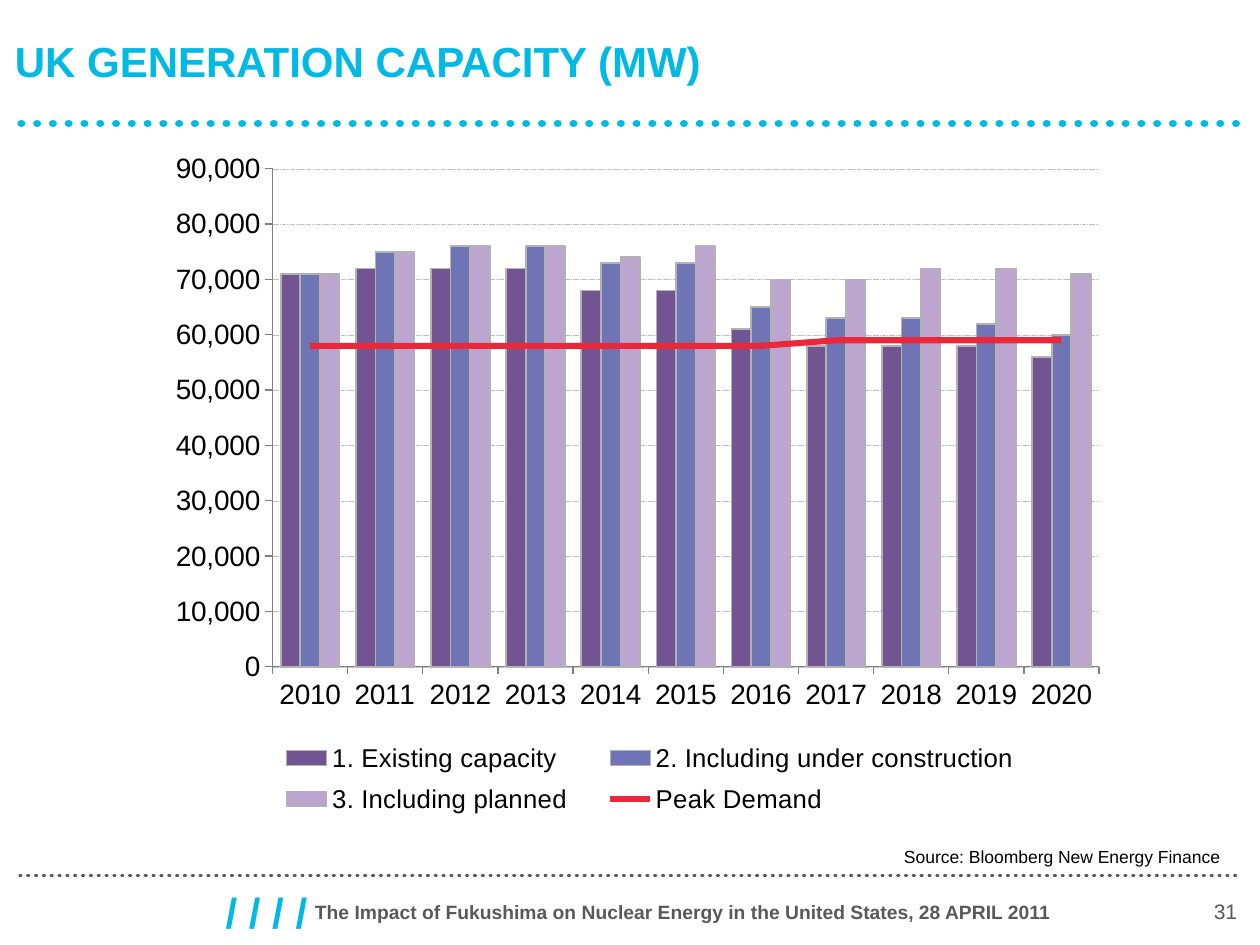
from lxml import etree
from pptx import Presentation
from pptx.chart.data import CategoryChartData
from pptx.dml.color import RGBColor
from pptx.enum.chart import XL_CHART_TYPE as ChartType, XL_LEGEND_POSITION as LegendPosition
from pptx.enum.chart import XL_MARKER_STYLE as MarkerStyle, XL_TICK_MARK as TickMark
from pptx.enum.dml import MSO_LINE as Dash
from pptx.enum.shapes import MSO_CONNECTOR as Connector
from pptx.enum.text import MSO_ANCHOR as Anchor, PP_ALIGN as Align
from pptx.oxml import parse_xml
from pptx.oxml.ns import nsdecls, qn
from pptx.util import Cm, Pt

FONT = "Arial"
CYAN, GREY, BLACK = "00B9E4", "595959", "000000"
BAR_EDGE, AXIS_GREY, GRID_GREY = "B2B2B2", "808080", "C0C0C0"

TEXTS = [
    ("The Impact of Fukushima on Nuclear Energy in the United States, 28 APRIL 2011",
     (6.35, 17.7, 16.23, 1.35), 11, GREY, True, Align.LEFT, (0, 0.1), Anchor.MIDDLE),
    ("31", (21.41, 17.7, 3.78, 1.35), 12, GREY, False, Align.RIGHT, (0.25, 0.13), Anchor.MIDDLE),
    ("/ / / /", (4.55, 17.7, 3.89, 1.35), 24, CYAN, True, Align.LEFT, (0, 0.1), Anchor.MIDDLE),
    ("UK GENERATION CAPACITY (MW)",
     (0.3, 0.42, 24.71, 1.6), 24, CYAN, True, Align.LEFT, (0, 0.13), Anchor.MIDDLE),
    ("Source: Bloomberg New Energy Finance",
     (0.99, 16.92, 23.85, 0.74), 10, BLACK, False, Align.RIGHT, (0.25, 0.13), Anchor.TOP),
]
RULES = [(0.41, 17.65, 24.97, GREY, 2.25), (0.43, 2.49, 24.99, CYAN, 4.5)]

YEARS = [str(year) for year in range(2010, 2021)]
CAPACITY = [
    ("1. Existing capacity", "725492", [71, 72, 72, 72, 68, 68, 61, 58, 58, 58, 56]),
    ("2. Including under construction", "6F75B4", [71, 75, 76, 76, 73, 73, 65, 63, 63, 62, 60]),
    ("3. Including planned", "BCA6D0", [71, 75, 76, 76, 74, 76, 70, 70, 72, 72, 71]),
]
DEMAND = ("Peak Demand", "EA2839", [58, 58, 58, 58, 58, 58, 58, 59, 59, 59, 59])
CHART_BOX = (2.41, 2.24, 20.57, 14.55)
PLOT_AREA = (0.15, 0.08, 0.81, 0.69)
LEGEND_AREA = (0.13, 0.86, 0.78, 0.13)


def color(value):
    return RGBColor.from_string(value)


def style_line(line, value, width, dash=None):
    line.color.rgb = color(value)
    line.width = Pt(width)
    if dash:
        line.dash_style = dash


def style_font(font, size, value=BLACK, bold=False):
    font.name, font.size, font.bold = FONT, Pt(size), bold
    font.color.rgb = color(value)


def add_text(slide, text, box, size, value, bold, align, insets, anchor):
    frame = slide.shapes.add_textbox(*map(Cm, box)).text_frame
    frame.word_wrap = True
    frame.vertical_anchor = anchor
    frame.margin_left, frame.margin_right = Cm(insets[0]), Cm(insets[0])
    frame.margin_top, frame.margin_bottom = Cm(insets[1]), Cm(insets[1])
    paragraph = frame.paragraphs[0]
    paragraph.alignment = align
    run = paragraph.add_run()
    run.text = text
    style_font(run.font, size, value, bold)


def add_rule(slide, left, top, right, value, width):
    rule = slide.shapes.add_connector(Connector.STRAIGHT, Cm(left), Cm(top), Cm(right), Cm(top))
    style_line(rule.line, value, width, Dash.ROUND_DOT)
    rule.get_or_add_ln().set("cap", "rnd")
    etree.SubElement(rule._element.spPr, qn("a:effectLst"))


def layout_xml(area, inner=False):
    target = '<c:layoutTarget val="inner"/>' if inner else ""
    modes = '<c:xMode val="edge"/><c:yMode val="edge"/>'
    sizes = "".join(f'<c:{name} val="{value}"/>' for name, value in zip("xywh", area))
    return parse_xml(f'<c:layout {nsdecls("c")}><c:manualLayout>{target}{modes}{sizes}'
                     '</c:manualLayout></c:layout>')


def remove_children(element, tag):
    for child in element.findall(qn(tag)):
        element.remove(child)


def move_last_series_to_line(chart):
    bars = chart._chartSpace.find(".//" + qn("c:barChart"))
    series = bars.findall(qn("c:ser"))[-1]
    remove_children(series, "c:invertIfNegative")
    lines = parse_xml(f'<c:lineChart {nsdecls("c")}><c:grouping val="standard"/>'
                      '<c:varyColors val="0"/><c:marker val="1"/></c:lineChart>')
    lines.insert(2, series)
    for axis in bars.findall(qn("c:axId")):
        etree.SubElement(lines, qn("c:axId")).set("val", axis.get("val"))
    bars.addnext(lines)


def add_capacity_chart(slide):
    data = CategoryChartData(number_format="#,##0")
    data.categories = YEARS
    for name, _, thousands in CAPACITY + [DEMAND]:
        data.add_series(name, [value * 1000 for value in thousands])
    chart = slide.shapes.add_chart(ChartType.COLUMN_CLUSTERED, *map(Cm, CHART_BOX), data).chart
    chart.has_title = False
    style_font(chart.font, 16)
    move_last_series_to_line(chart)

    bars, lines = chart.plots
    bars.gap_width, bars.overlap = 84, 0
    bars.vary_by_categories = False
    for series, (_, value, _) in zip(bars.series, CAPACITY):
        series.invert_if_negative = False
        series.format.fill.solid()
        series.format.fill.fore_color.rgb = color(value)
        style_line(series.format.line, BAR_EDGE, 1)
    demand = lines.series[0]
    demand.smooth = False
    demand.marker.style = MarkerStyle.NONE
    style_line(demand.format.line, DEMAND[1], 3.5)

    for axis in (chart.category_axis, chart.value_axis):
        axis.major_tick_mark, axis.minor_tick_mark = TickMark.OUTSIDE, TickMark.NONE
        style_font(axis.tick_labels.font, 16)
        style_line(axis.format.line, AXIS_GREY, 0.75)
    values = chart.value_axis
    values.minimum_scale, values.maximum_scale, values.major_unit = 0, 90000, 10000
    values.tick_labels.number_format = "#,##0"
    values.tick_labels.number_format_is_linked = False
    style_line(values.major_gridlines.format.line, GRID_GREY, 0.25, Dash.SQUARE_DOT)

    chart.has_legend = True
    legend = chart.legend
    legend.position = LegendPosition.BOTTOM
    legend.include_in_layout = False
    style_font(legend.font, 14.7)
    plot_area = chart._chartSpace.find(".//" + qn("c:plotArea"))
    remove_children(plot_area, "c:layout")
    plot_area.insert(0, layout_xml(PLOT_AREA, inner=True))
    remove_children(legend._element, "c:layout")
    legend._element.find(qn("c:legendPos")).addnext(layout_xml(LEGEND_AREA))


def main():
    presentation = Presentation()
    presentation.slide_width, presentation.slide_height = Cm(25.4), Cm(19.05)
    slide = presentation.slides.add_slide(presentation.slide_layouts[6])
    slide.background.fill.solid()
    slide.background.fill.fore_color.rgb = color("FFFFFF")
    for rule in RULES:
        add_rule(slide, *rule)
    add_capacity_chart(slide)
    for text in TEXTS:
        add_text(slide, *text)
    presentation.save("out.pptx")


if __name__ == "__main__":
    main()
